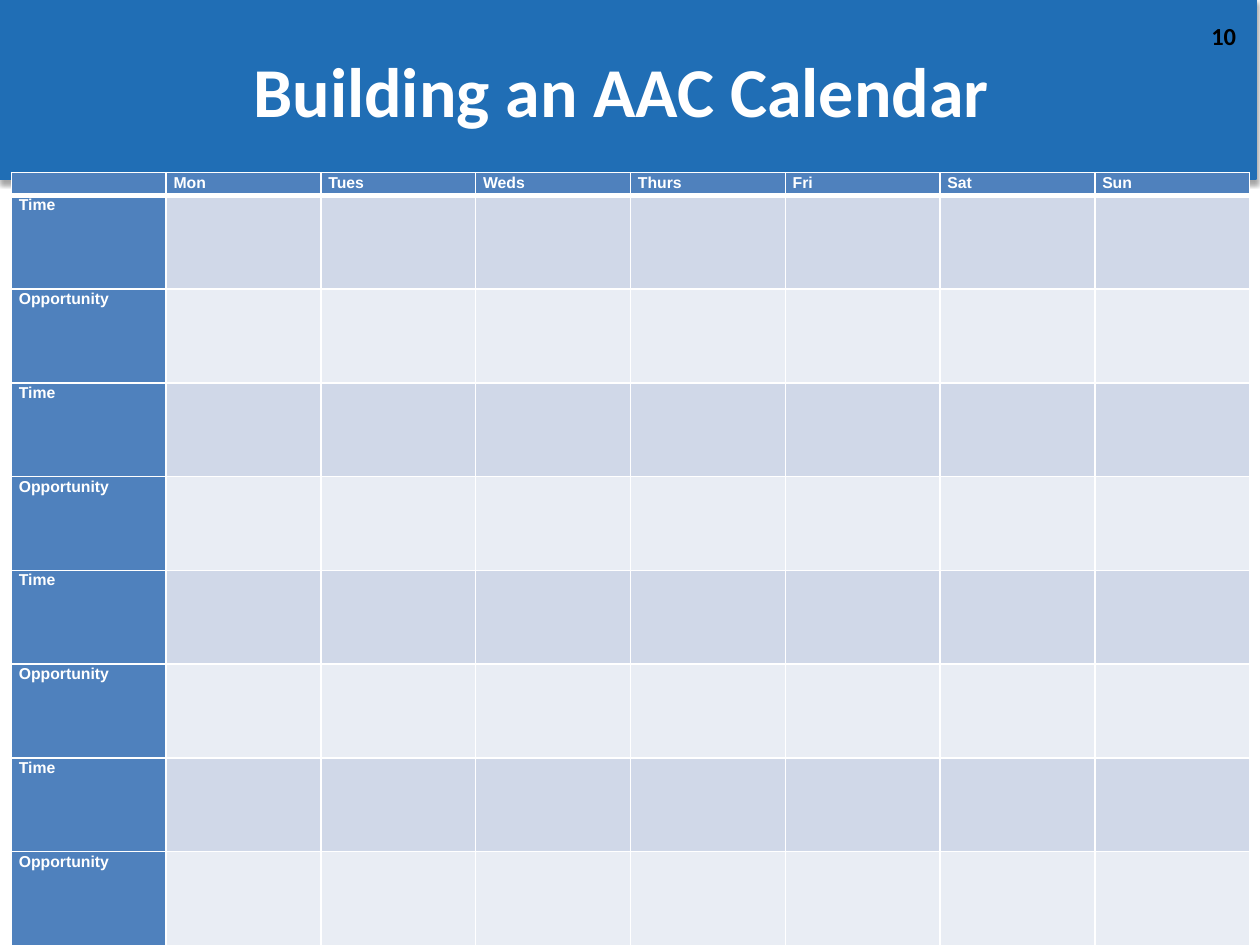
from dataclasses import dataclass

from lxml import etree
from pptx import Presentation
from pptx import util as u
from pptx.dml.color import RGBColor
from pptx.enum import shapes, text
from pptx.oxml import ns

Cm, Pt = u.Cm, u.Pt

BANNER_BLUE = RGBColor(0x20, 0x6E, 0xB5)
HEADER_BLUE = RGBColor(0x4F, 0x81, 0xBD)
BAND_DARK = RGBColor(0xD0, 0xD8, 0xE8)
BAND_LIGHT = RGBColor(0xE9, 0xED, 0xF4)
WHITE = RGBColor(0xFF, 0xFF, 0xFF)
BLACK = RGBColor(0, 0, 0)

DAYS = ["Mon", "Tues", "Weds", "Thurs", "Fri", "Sat", "Sun"]
ROW_LABELS = ["Time", "Opportunity"] * 4
HEADER_HEIGHT, ROW_HEIGHT, COL_WIDTH = Cm(0.46), Cm(1.89), Cm(3.12)


@dataclass
class Label:
    text: str
    left: u.Length
    top: u.Length
    width: u.Length
    height: u.Length
    size: int
    color: RGBColor
    align: text.PP_ALIGN
    anchor: text.MSO_ANCHOR


LABELS = [
    Label("10", Cm(24.13), Cm(0.3), Cm(1.04), Cm(1.02), 14, BLACK,
          text.PP_ALIGN.RIGHT, text.MSO_ANCHOR.TOP),
    Label("Building an AAC Calendar", Cm(-0.13), 0, Cm(25.3), Cm(3.61), 40, WHITE,
          text.PP_ALIGN.CENTER, text.MSO_ANCHOR.MIDDLE),
]


def set_font(p, name: str, size: int, color: RGBColor) -> None:
    p.font.name, p.font.size, p.font.bold = name, Pt(size), True
    p.font.color.rgb = color


def add_banner(s) -> None:
    sp = s.shapes.add_shape(shapes.MSO_SHAPE.RECTANGLE, 0, 0, Cm(25.32), Cm(3.61))
    sp.fill.solid()
    sp.fill.fore_color.rgb = BANNER_BLUE
    sp.line.color.rgb = BANNER_BLUE
    sp.line.width = Pt(0.75)
    sp.shadow.inherit = False
    effects = sp._element.spPr.find(ns.qn("a:effectLst"))
    shadow = etree.SubElement(effects, ns.qn("a:outerShdw"), blurRad=str(Pt(3.1)),
                              dist=str(Pt(1.8)), dir="5400000", rotWithShape="0")
    color = etree.SubElement(shadow, ns.qn("a:srgbClr"), val=str(BLACK))
    etree.SubElement(color, ns.qn("a:alpha"), val="35000")


def add_label(s, label: Label) -> None:
    sp = s.shapes.add_textbox(label.left, label.top, label.width, label.height)
    tf = sp.text_frame
    tf.word_wrap = True
    tf.vertical_anchor = label.anchor
    p = tf.paragraphs[0]
    p.text = label.text
    p.alignment = label.align
    set_font(p, "Calibri", label.size, label.color)


def set_borders(cell, bottom: int, top: int) -> None:
    """Draw white cell borders; they must precede the fill in the XML."""
    tc_pr = cell._tc.get_or_add_tcPr()
    for i, (side, width) in enumerate([("L", 1), ("R", 1), ("T", top), ("B", bottom)]):
        ln = etree.Element(ns.qn(f"a:ln{side}"), w=str(Pt(width)))
        fill = etree.SubElement(ln, ns.qn("a:solidFill"))
        etree.SubElement(fill, ns.qn("a:srgbClr"), val=str(WHITE))
        tc_pr.insert(i, ln)


def fill_cell(cell, words: str, color: RGBColor, top: int, bottom: int) -> None:
    cell.margin_left = cell.margin_right = Cm(0.15)
    cell.margin_top = cell.margin_bottom = 0
    cell.fill.solid()
    cell.fill.fore_color.rgb = color
    set_borders(cell, bottom, top)
    p = cell.text_frame.paragraphs[0]
    p.line_spacing = 1.07
    set_font(p, "Arial", 9, WHITE)
    if words:
        p.text = words
    else:
        etree.SubElement(p._p, ns.qn("a:endParaRPr"), sz="900")


def add_calendar(s) -> None:
    rows = [["", *DAYS]] + [[label] + [""] * len(DAYS) for label in ROW_LABELS]
    n_cols = len(rows[0])
    height = HEADER_HEIGHT + ROW_HEIGHT * len(ROW_LABELS)
    table = s.shapes.add_table(len(rows), n_cols, Cm(0.23), Cm(3.48),
                               COL_WIDTH * n_cols, height).table
    for col in table.columns:
        col.width = COL_WIDTH
    for i, words in enumerate(rows):
        table.rows[i].height = ROW_HEIGHT if i else HEADER_HEIGHT
        band = BAND_DARK if i % 2 else BAND_LIGHT
        for j, word in enumerate(words):
            color = HEADER_BLUE if i == 0 or j == 0 else band
            fill_cell(table.cell(i, j), word, color,
                      top=3 if i == 1 else 1, bottom=3 if i == 0 else 1)


def main() -> None:
    prs = Presentation()
    prs.slide_width, prs.slide_height = Cm(25.4), Cm(19.05)
    s = prs.slides.add_slide(prs.slide_layouts[6])
    add_banner(s)
    for label in LABELS:
        add_label(s, label)
    add_calendar(s)
    prs.save("out.pptx")


if __name__ == "__main__":
    main()
